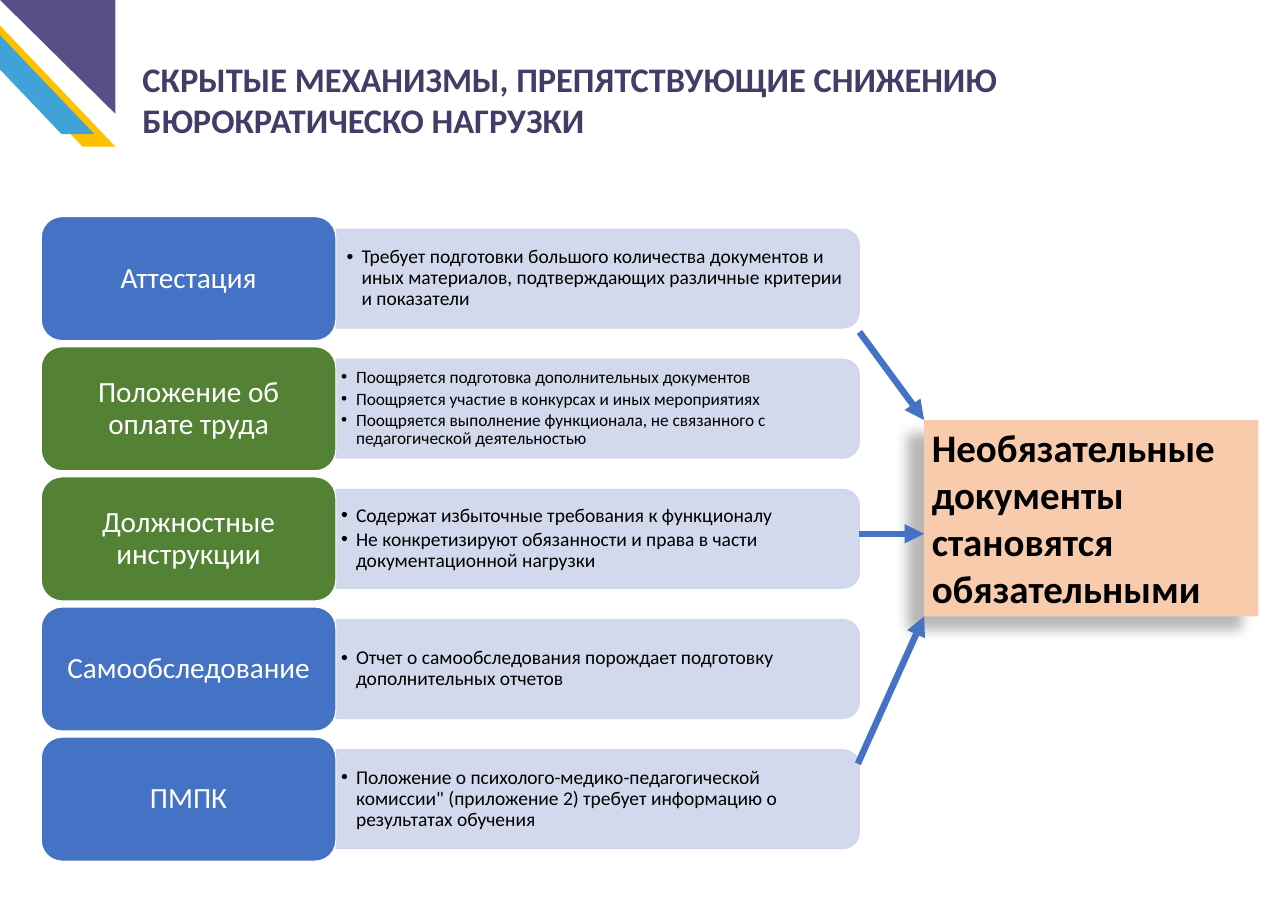
import pptx
import pptx.util
from lxml import etree
from pptx.dml.color import RGBColor
from pptx.enum.shapes import MSO_CONNECTOR, MSO_SHAPE
from pptx.enum.text import MSO_ANCHOR, MSO_AUTO_SIZE, PP_ALIGN
from pptx.oxml.ns import qn

TITLE = "СКРЫТЫЕ МЕХАНИЗМЫ, ПРЕПЯТСТВУЮЩИЕ СНИЖЕНИЮ БЮРОКРАТИЧЕСКО НАГРУЗКИ"
MECHANISMS = [
    ("Аттестация", "blue", 18, (0.14, 0.07), [
        "Требует подготовки большого количества документов и иных материалов, "
        "подтверждающих различные критерии и показатели"]),
    ("Положение об оплате труда", "green", 16, (0.07, 0.03), [
        "Поощряется подготовка дополнительных документов",
        "Поощряется участие в конкурсах и иных мероприятиях",
        "Поощряется выполнение функционала, не связанного с педагогической деятельностью"]),
    ("Должностные инструкции", "green", 18, (0.07, 0.03), [
        "Содержат избыточные требования к функционалу",
        "Не конкретизируют обязанности и права в части документационной нагрузки"]),
    ("Самообследование", "blue", 18, (0.07, 0.03), [
        "Отчет о самообследования порождает подготовку дополнительных отчетов"]),
    ("ПМПК", "blue", 18, (0.07, 0.03), [
        "Положение о психолого-медико-педагогической комиссии\" (приложение 2) "
        "требует информацию о результатах обучения"]),
]
RESULT = ["Необязательные документы", "становятся обязательными"]

COLORS = {
    "blue": "4472C4", "green": "548235", "panel": "CFD5EA", "result": "F8CBAD",
    "title": "423D67", "black": "000000", "white": "FFFFFF",
    "yellow": "FFC000", "sky": "41A2D8", "violet": "565087",
}
FONT = "Calibri"

CARD_LEFT, CARD_TOP, CARD_W, CARD_H = 0.53, 2.78, 3.78, 1.59
ROW_STEP = 1.67
PANEL_LEFT, PANEL_W, PANEL_H = CARD_LEFT + CARD_W, 6.72, 1.27
DETAIL_W, DETAIL_H = 6.66, 1.15
RESULT_LEFT, RESULT_TOP, RESULT_W, RESULT_H = 11.86, 5.39, 4.29, 2.52
CORNER = [
    (MSO_SHAPE.PARALLELOGRAM, (-0.79, -0.06, 2.27, 1.94), "yellow", ["flipH"]),
    (MSO_SHAPE.PARALLELOGRAM, (-1.06, -0.22, 2.27, 1.94), "sky", ["flipH"]),
    (MSO_SHAPE.RIGHT_TRIANGLE, (0, 0, 1.48, 1.46), "violet", ["flipH", "flipV"]),
]
ARROWS = [
    ((11.03, 4.26), (RESULT_LEFT, RESULT_TOP)),
    ((11.02, 6.85), (RESULT_LEFT, 6.85)),
    ((11.01, 9.8), (RESULT_LEFT, RESULT_TOP + RESULT_H)),
]

deck = pptx.Presentation()
deck.slide_width = pptx.util.Inches(16.53)
deck.slide_height = pptx.util.Inches(11.69)
slide = deck.slides.add_slide(deck.slide_layouts[6])


def color(name):
    return RGBColor.from_string(COLORS[name])


def inches(values):
    return [pptx.util.Inches(value) for value in values]


def add_block(kind, box, fill, outline=None):
    block = slide.shapes.add_shape(kind, *inches(box))
    block.shadow.inherit = False
    block.fill.solid()
    block.fill.fore_color.rgb = color(fill)
    if outline:
        block.line.color.rgb = color(outline)
        block.line.width = pptx.util.Pt(1)
    else:
        block.line.fill.background()
    return block


def write(holder, lines, size, ink, bold=False, align=PP_ALIGN.LEFT, anchor=MSO_ANCHOR.TOP,
          insets=(0.1, 0.05), spacing=1, after=0, bullets=False):
    frame = holder.text_frame
    frame.text = "\n".join(lines)
    frame.word_wrap = True
    frame.auto_size = MSO_AUTO_SIZE.NONE
    frame.vertical_anchor = anchor
    frame.margin_left = frame.margin_right = pptx.util.Inches(insets[0])
    frame.margin_top = frame.margin_bottom = pptx.util.Inches(insets[1])
    for paragraph in frame.paragraphs:
        paragraph.alignment = align
        paragraph.line_spacing = spacing
        paragraph.space_after = pptx.util.Pt(after)
        if bullets:
            indent = pptx.util.Inches(0.19)
            props = paragraph._p.get_or_add_pPr()
            props.set("marL", str(indent))
            props.set("indent", str(-indent))
            etree.SubElement(props, qn("a:buFont"), typeface="Arial")
            etree.SubElement(props, qn("a:buChar"), char="•")
        for run in paragraph.runs:
            run.font.name = FONT
            run.font.size = pptx.util.Pt(size)
            run.font.bold = bold
            run.font.color.rgb = color(ink)


def add_arrow(start, end):
    arrow = slide.shapes.add_connector(MSO_CONNECTOR.STRAIGHT, *inches(start + end))
    arrow.line.color.rgb = color("blue")
    arrow.line.width = pptx.util.Pt(6)
    etree.SubElement(arrow.line._get_or_add_ln(), qn("a:tailEnd"), type="triangle")
    etree.SubElement(arrow._element.spPr, qn("a:effectLst"))


def add_mechanism(row, label, fill, size, insets, details):
    top = CARD_TOP + row * ROW_STEP
    middle = top + CARD_H / 2
    panel = add_block(MSO_SHAPE.ROUND_2_SAME_RECTANGLE,
                      (PANEL_LEFT + (PANEL_W - PANEL_H) / 2, middle - PANEL_W / 2,
                       PANEL_H, PANEL_W), "panel", "panel")
    panel.rotation = 90
    for tint in panel._element.spPr.iter(qn("a:srgbClr")):
        etree.SubElement(tint, qn("a:alpha"), val="90000")
    detail = slide.shapes.add_textbox(
        *inches((PANEL_LEFT, middle - DETAIL_H / 2, DETAIL_W, DETAIL_H)))
    write(detail, details, size, "black", anchor=MSO_ANCHOR.MIDDLE, insets=insets,
          spacing=0.9, after=0.15 * size, bullets=True)
    card = add_block(MSO_SHAPE.ROUNDED_RECTANGLE, (CARD_LEFT, top, CARD_W, CARD_H), fill, "white")
    write(card, [label], 27, "white", align=PP_ALIGN.CENTER, anchor=MSO_ANCHOR.MIDDLE,
          insets=(0.11, 0.06), spacing=0.9)


for kind, box, fill, flips in CORNER:
    stripe = add_block(kind, box, fill)
    if kind == MSO_SHAPE.PARALLELOGRAM:
        stripe.adjustments[0] = 0.953
    for flip in flips:
        stripe._element.spPr.xfrm.set(flip, "1")

heading = slide.shapes.add_textbox(*inches((1.73, 0.69, 11.75, 1.17)))
write(heading, [TITLE], 31.8, "title", bold=True)

for row, mechanism in enumerate(MECHANISMS):
    add_mechanism(row, *mechanism)

result = add_block(MSO_SHAPE.RECTANGLE, (RESULT_LEFT, RESULT_TOP, RESULT_W, RESULT_H), "result")
write(result, RESULT, 36, "black", bold=True)
shadow = etree.SubElement(
    result._element.spPr.find(qn("a:effectLst")), qn("a:outerShdw"),
    blurRad=str(pptx.util.Pt(11.8)), dist=str(pptx.util.Pt(19.7)),
    dir=str(141 * 60000), algn="tr", rotWithShape="0")
shade = etree.SubElement(shadow, qn("a:srgbClr"), val=COLORS["black"])
etree.SubElement(shade, qn("a:alpha"), val="28000")

for start, end in ARROWS:
    add_arrow(start, end)

deck.save("out.pptx")
